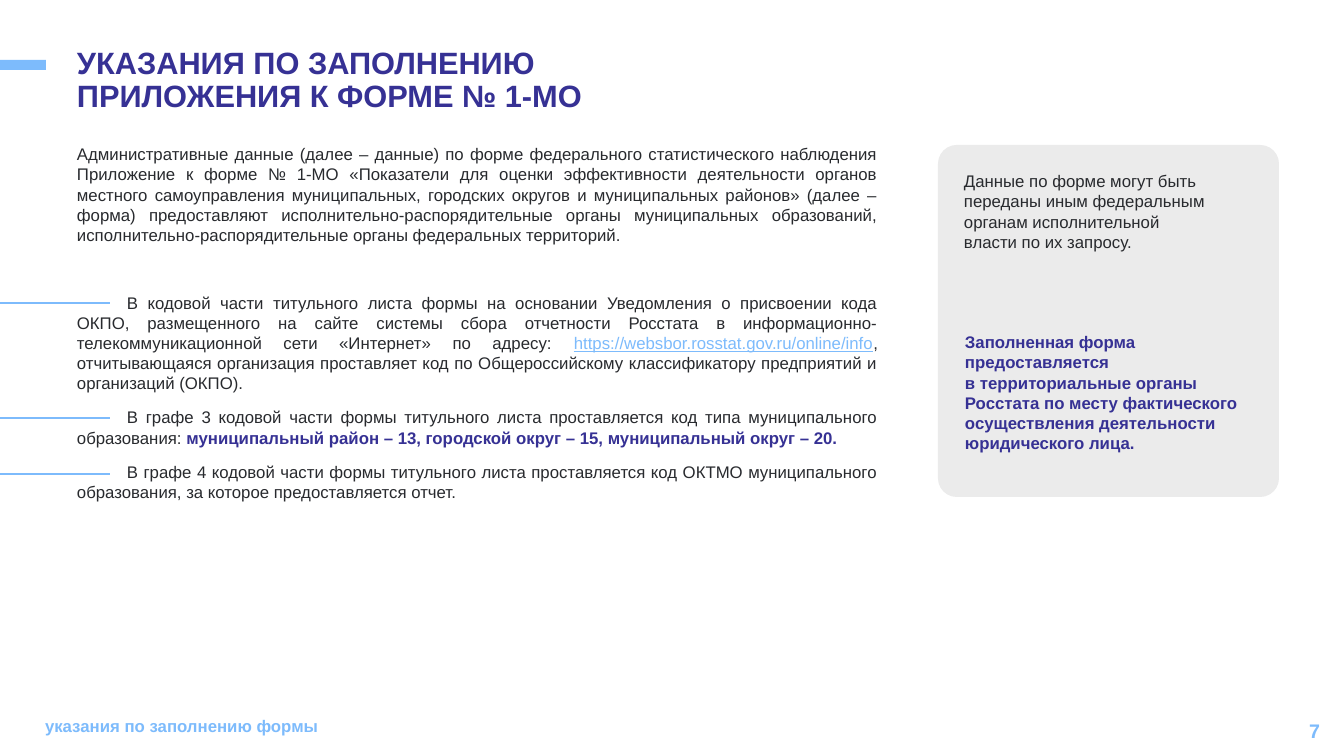
from lxml.etree import SubElement
from pptx import Presentation
from pptx.dml.color import RGBColor
from pptx.enum.shapes import MSO_CONNECTOR, MSO_SHAPE
from pptx.enum.text import MSO_ANCHOR, PP_ALIGN
from pptx.oxml.ns import qn
from pptx.util import Emu, Pt

COLORS = {
    "accent": "7DBBFC",
    "heading": "363194",
    "text": "282A2E",
    "panel": "EBEBEB",
}


class SlideBuilder:
    font_name = "Arial"
    emu_per_px = 914400 / 100.8

    def __init__(self, presentation):
        presentation.slide_width = self.px(1344)
        presentation.slide_height = self.px(756)
        self.slide = presentation.slides.add_slide(presentation.slide_layouts[6])

    def px(self, value):
        return Emu(round(value * self.emu_per_px))

    def box(self, *bounds):
        return [self.px(value) for value in bounds]

    def color(self, name):
        return RGBColor.from_string(COLORS[name])

    def block(self, kind, bounds, fill, radius=None):
        shape = self.slide.shapes.add_shape(kind, *self.box(*bounds))
        shape.shadow.inherit = False
        shape.fill.solid()
        shape.fill.fore_color.rgb = self.color(fill)
        shape.line.fill.background()
        if radius is not None:
            shape.adjustments[0] = radius

    def line(self, left, right, y):
        connector = self.slide.shapes.add_connector(
            MSO_CONNECTOR.STRAIGHT, *self.box(left, y, right, y))
        connector.line.color.rgb = self.color("accent")
        connector.line.width = Pt(1.5)
        SubElement(connector._element.spPr, qn("a:effectLst"))

    def frame(self, bounds, insets=(10, 5, 10, 5), anchor=MSO_ANCHOR.TOP):
        text_frame = self.slide.shapes.add_textbox(*self.box(*bounds)).text_frame
        text_frame.word_wrap = True
        text_frame.vertical_anchor = anchor
        (text_frame.margin_left, text_frame.margin_top,
         text_frame.margin_right, text_frame.margin_bottom) = self.box(*insets)
        return text_frame

    def format_run(self, run, color, size=12, bold=False, underline=False):
        run.font.name = self.font_name
        run.font.size = Pt(size)
        run.font.bold = bold
        run.font.underline = underline
        run.font.color.rgb = self.color(color)

    def label(self, bounds, text, color, size=12, bold=True,
              align=PP_ALIGN.LEFT, line_spacing=1.0, **frame_options):
        paragraph = self.frame(bounds, **frame_options).paragraphs[0]
        paragraph.text = text
        paragraph.alignment = align
        paragraph.line_spacing = line_spacing
        for run in paragraph.runs:
            self.format_run(run, color, size, bold)

    def article(self, bounds, items):
        text_frame = self.frame(bounds)
        for index, (space_before, indent, parts) in enumerate(items):
            paragraph = text_frame.add_paragraph() if index else text_frame.paragraphs[0]
            paragraph.alignment = PP_ALIGN.JUSTIFY
            if space_before:
                paragraph.space_before = Pt(space_before)
            if indent:
                paragraph._p.get_or_add_pPr().set("indent", str(self.px(indent)))
            for text, style in parts:
                run = paragraph.add_run()
                run.text = text
                self.format_run(run, **style)


PLAIN = {"color": "text"}
STRONG = {"color": "heading", "bold": True}
ADDRESS = {"color": "accent", "underline": True}

INSTRUCTIONS = [
    (0, 0, [(
        "Административные данные (далее – данные) по форме федерального "
        "статистического наблюдения Приложение к форме № 1-МО «Показатели для оценки "
        "эффективности деятельности органов местного самоуправления муниципальных, "
        "городских округов и муниципальных районов» (далее – форма) предоставляют "
        "исполнительно-распорядительные органы муниципальных образований, "
        "исполнительно-распорядительные органы федеральных территорий.", PLAIN)]),
    (34, 50, [
        ("В кодовой части титульного листа формы на основании Уведомления о присвоении "
         "кода ОКПО, размещенного на сайте системы сбора отчетности Росстата в "
         "информационно-телекоммуникационной сети «Интернет» по адресу: ", PLAIN),
        ("https://websbor.rosstat.gov.ru/online/info", ADDRESS),
        (", отчитывающаяся организация проставляет код по Общероссийскому "
         "классификатору предприятий и организаций (ОКПО).", PLAIN)]),
    (10, 50, [
        ("В графе 3 кодовой части формы титульного листа проставляется код типа "
         "муниципального образования: ", PLAIN),
        ("муниципальный район – 13, городской округ – 15, "
         "муниципальный округ – 20.", STRONG)]),
    (10, 50, [(
        "В графе 4 кодовой части формы титульного листа проставляется код ОКТМО "
        "муниципального образования, за которое предоставляется отчет.", PLAIN)]),
]


def main():
    presentation = Presentation()
    builder = SlideBuilder(presentation)

    builder.block(MSO_SHAPE.RECTANGLE, (0, 60, 46, 10), "accent")
    builder.label((67, 43, 1049, 57),
                  "УКАЗАНИЯ ПО ЗАПОЛНЕНИЮ\vПРИЛОЖЕНИЯ К ФОРМЕ № 1-МО",
                  "heading", size=22, line_spacing=0.9)
    builder.article((67, 139, 821, 549), INSTRUCTIONS)
    for y in (303, 418, 474):
        builder.line(0, 110, y)

    builder.block(MSO_SHAPE.ROUNDED_RECTANGLE, (938, 145, 341, 352), "panel", radius=0.055)
    builder.label((964, 166, 283, 90),
                  "Данные по форме могут быть переданы иным федеральным "
                  "органам исполнительной\vвласти по их запросу.",
                  "text", bold=False, insets=(0, 5, 10, 5))
    builder.label((964, 331, 283, 124),
                  "Заполненная форма предоставляется\vв территориальные органы "
                  "Росстата по месту фактического осуществления деятельности "
                  "юридического лица.",
                  "heading", insets=(1, 1, 0, 0))

    builder.label((35, 711, 1127, 40), "указания по заполнению формы", "accent")
    builder.label((1028, 711, 302, 40), "7", "accent", size=14,
                  align=PP_ALIGN.RIGHT, anchor=MSO_ANCHOR.MIDDLE)

    presentation.save("out.pptx")


if __name__ == "__main__":
    main()
